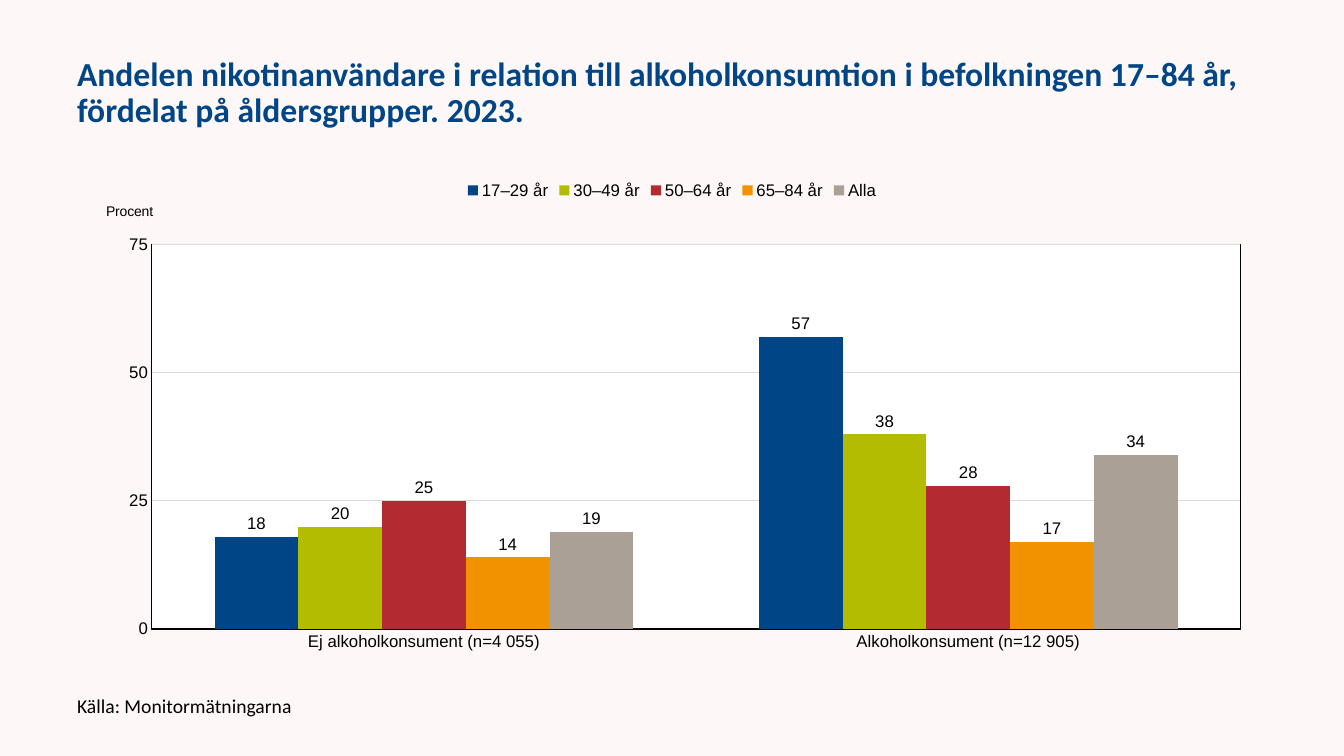
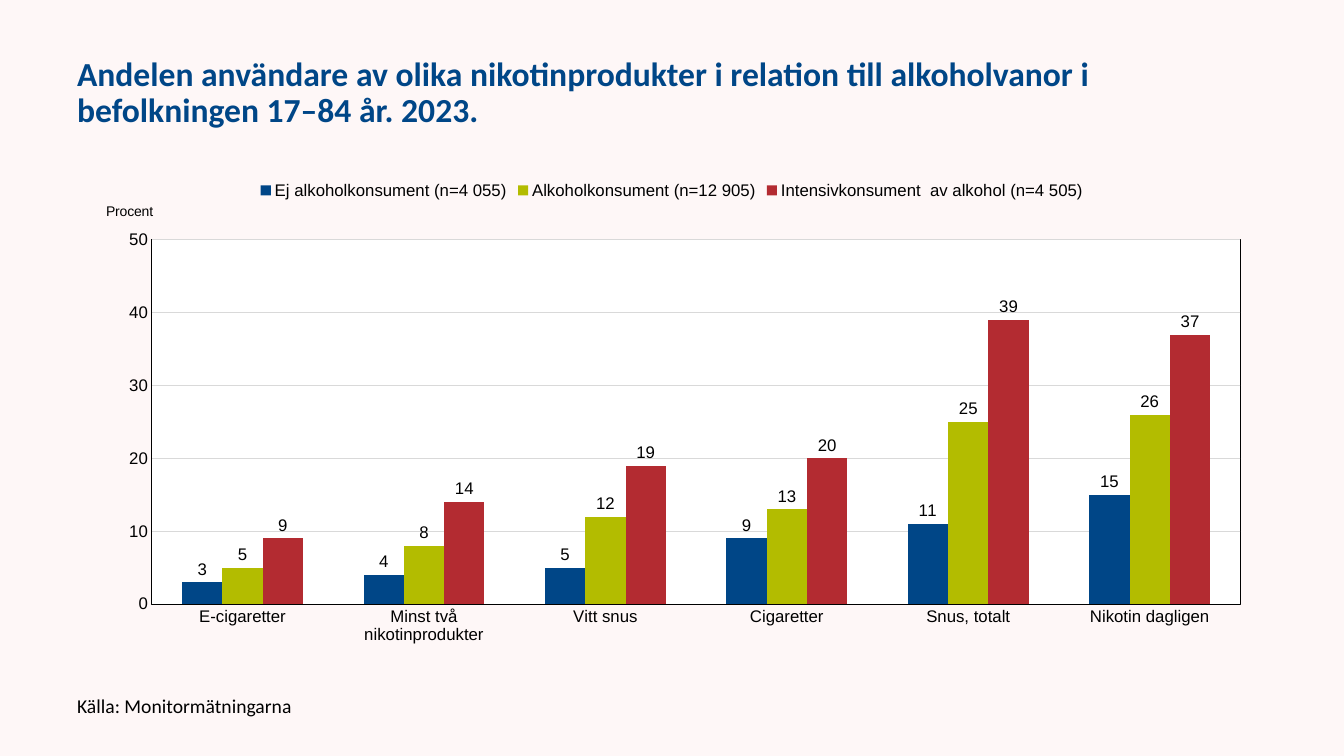
from lxml import etree
from pptx import Presentation
from pptx.chart.data import CategoryChartData
from pptx.dml.color import RGBColor
from pptx.enum.chart import XL_CHART_TYPE as ChartType
from pptx.enum.chart import XL_LABEL_POSITION as LabelPosition
from pptx.enum.chart import XL_LEGEND_POSITION as LegendPosition
from pptx.enum.chart import XL_TICK_MARK as TickMark
from pptx.enum.text import MSO_ANCHOR
from pptx.oxml import parse_xml
from pptx.oxml.ns import nsdecls, qn
from pptx.util import Inches, Pt

BACKGROUND = RGBColor(0xFE, 0xF7, 0xF7)
BLACK = RGBColor(0x00, 0x00, 0x00)
GRID = RGBColor(0xD9, 0xD9, 0xD9)
BLUE = RGBColor(0x00, 0x46, 0x87)
GREEN = RGBColor(0xB3, 0xBC, 0x00)
RED = RGBColor(0xB3, 0x2B, 0x31)
ORANGE = RGBColor(0xF2, 0x92, 0x00)
GREY = RGBColor(0xAA, 0xA0, 0x96)
SERIES_COLORS = [BLUE, GREEN, RED, ORANGE, GREY]

NON_DRINKERS = "Ej alkoholkonsument (n=4 055)"
DRINKERS = "Alkoholkonsument (n=12 905)"

CONTENT = [
    {
        "title": "Andelen nikotinanvändare i relation till alkoholkonsumtion i "
                 "befolkningen 17–84 år, fördelat på åldersgrupper. 2023.",
        "groups": [NON_DRINKERS, DRINKERS],
        "series": {
            "17–29 år": [18, 57],
            "30–49 år": [20, 38],
            "50–64 år": [25, 28],
            "65–84 år": [14, 17],
            "Alla": [19, 34],
        },
        "top": 75,
        "step": 25,
        "plot": {"x": 0.07, "y": 0.15, "w": 0.9, "h": 0.77},
        "unit": {"x": 0.03, "y": 0.06},
    },
    {
        "title": "Andelen användare av olika nikotinprodukter i relation till "
                 "alkoholvanor i befolkningen 17–84 år. 2023.",
        "groups": ["E-cigaretter", "Minst två nikotinprodukter", "Vitt snus",
                   "Cigaretter", "Snus, totalt", "Nikotin dagligen"],
        "series": {
            NON_DRINKERS: [3, 4, 5, 9, 11, 15],
            DRINKERS: [5, 8, 12, 13, 25, 26],
            "Intensivkonsument  av alkohol (n=4 505)": [9, 14, 19, 20, 39, 37],
        },
        "top": 50,
        "step": 10,
        "plot": {"x": 0.07, "y": 0.14, "w": 0.9, "h": 0.73},
        "unit": {"x": 0.03, "y": 0.06},
    },
]

prs = Presentation()
prs.slide_width, prs.slide_height = Inches(13.33), Inches(7.5)
COL, ROW = prs.slide_width / 40, prs.slide_height / 40
LEFT, WIDTH = int(2 * COL), int(36 * COL)

master_fill = prs.slide_master.background.fill
master_fill.solid()
master_fill.fore_color.rgb = BACKGROUND


def add_text(slide, text, top, height, width=WIDTH, size=14, color=BLACK, bold=False):
    frame = slide.shapes.add_textbox(LEFT, int(top * ROW), width, int(height * ROW)).text_frame
    frame.word_wrap = True
    frame.vertical_anchor = MSO_ANCHOR.MIDDLE
    paragraph = frame.paragraphs[0]
    paragraph.text = text
    paragraph.line_spacing = 0.9
    font = paragraph.font
    font.name, font.size, font.bold = "Calibri", Pt(size), bold
    font.color.rgb = color


def set_layout(parent, index, shares, inner=False):
    for old in parent.findall(qn("c:layout")):
        parent.remove(old)
    layout = parse_xml(f"<c:layout {nsdecls('c')}><c:manualLayout/></c:layout>")
    entries = {"layoutTarget": "inner"} if inner else {}
    entries |= {"xMode": "edge", "yMode": "edge"} | shares
    for tag, value in entries.items():
        etree.SubElement(layout[0], qn(f"c:{tag}"), val=str(value))
    parent.insert(index, layout)


for content in CONTENT:
    slide = prs.slides.add_slide(prs.slide_layouts[6])
    add_text(slide, content["title"], 1.6, 6.67, size=24, color=BLUE, bold=True)
    add_text(slide, "Källa: Monitormätningarna", 36.43, 2, width=WIDTH // 2)

    data = CategoryChartData(number_format="0")
    data.categories = content["groups"]
    for name, values in content["series"].items():
        data.add_series(name, values)
    chart = slide.shapes.add_chart(ChartType.COLUMN_CLUSTERED, LEFT, int(9 * ROW),
                                   WIDTH, int(26.4 * ROW), data).chart
    chart.has_title = False
    chart.font.name, chart.font.size = "Arial", Pt(12)
    chart.font.color.rgb = BLACK
    chart.has_legend = True
    chart.legend.position = LegendPosition.TOP
    chart.legend.include_in_layout = False

    bars = chart.plots[0]
    bars.gap_width = 150
    bars.vary_by_categories = False
    bars.has_data_labels = True
    labels = bars.data_labels
    labels.show_value = True
    labels.position = LabelPosition.OUTSIDE_END
    labels.number_format, labels.number_format_is_linked = "0", False
    for series, color in zip(bars.series, SERIES_COLORS):
        series.format.fill.solid()
        series.format.fill.fore_color.rgb = color

    percent_axis = chart.value_axis
    for axis in (chart.category_axis, percent_axis):
        axis.major_tick_mark = axis.minor_tick_mark = TickMark.NONE
        axis.format.line.color.rgb = BLACK
        axis.format.line.width = Pt(0.75)
    percent_axis.minimum_scale, percent_axis.maximum_scale = 0, content["top"]
    percent_axis.major_unit = content["step"]
    percent_axis.tick_labels.number_format = "0"
    percent_axis.tick_labels.number_format_is_linked = False
    percent_axis.major_gridlines.format.line.color.rgb = GRID
    percent_axis.major_gridlines.format.line.width = Pt(0.75)

    unit = percent_axis.axis_title.text_frame
    unit.text = "Procent"
    unit_font = unit.paragraphs[0].font
    unit_font.name, unit_font.size, unit_font.bold = "Arial", Pt(10), False
    unit_font.color.rgb = BLACK
    unit_title = chart.element.find(".//" + qn("c:valAx") + "/" + qn("c:title"))
    unit_body = unit_title.find(".//" + qn("a:bodyPr"))
    unit_body.set("rot", "0")
    unit_body.set("vert", "horz")
    set_layout(unit_title, 1, content["unit"])

    plot_area = chart.element.find(".//" + qn("c:plotArea"))
    set_layout(plot_area, 0, content["plot"], inner=True)
    plot_area.append(parse_xml(
        f"<c:spPr {nsdecls('c', 'a')}>"
        '<a:solidFill><a:srgbClr val="FFFFFF"/></a:solidFill>'
        f'<a:ln w="{Pt(0.75)}"><a:solidFill><a:srgbClr val="{BLACK}"/></a:solidFill></a:ln>'
        "</c:spPr>"))

prs.save("out.pptx")
